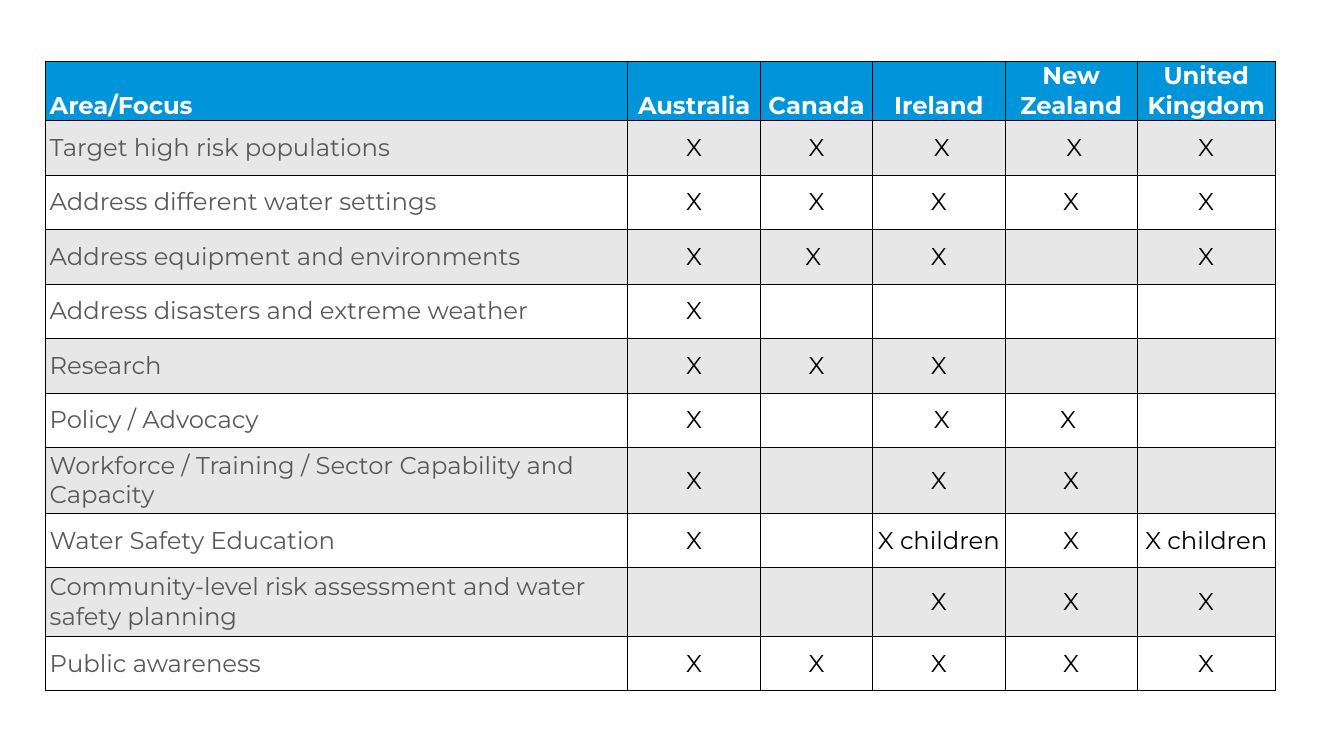
from lxml import etree
from pptx import Presentation, util as u
from pptx.dml.color import RGBColor
from pptx.enum import text
from pptx.oxml import ns

SLIDE_WIDTH = u.Inches(10)
SLIDE_HEIGHT = SLIDE_WIDTH * 9 // 16
COLORS = {
    "header": "0095DA",
    "band": "E7E7E7",
    "header_text": "FFFFFF",
    "area_text": "595959",
    "mark": "000000",
    "border": "000000",
}
FONT, FONT_SIZE = "Montserrat", u.Pt(13)
LEFT_SHARE, TOP_SHARE = 0.034, 0.081
COLUMN_WIDTHS = [4.33, 0.99, 0.83, 0.99, 0.98, 1.03]
TABLE_HEIGHT = 4.65
TALL_ROWS = {7: 0.49, 9: 0.51}

HEADER = ["Area/Focus", "Australia", "Canada", "Ireland", "New Zealand", "United Kingdom"]
FOCUS_AREAS = [
    ["Target high risk populations", "X", "X", " X", " X", "X"],
    ["Address different water settings", "X", "X", "X", "X", "X"],
    ["Address equipment and environments", "X", "X ", "X", "", "X"],
    ["Address disasters and extreme weather", "X", "", "", "", ""],
    ["Research", "X", "X", "X", "", ""],
    ["Policy / Advocacy", "X", "", " X", "X ", ""],
    ["Workforce / Training / Sector Capability and Capacity", "X", "", "X", "X", ""],
    ["Water Safety Education", "X", "", "X children", "X", "X children"],
    ["Community-level risk assessment and water safety planning", "", "", "X", "X", "X"],
    ["Public awareness", "X", "X", "X", "X", "X"],
]


def set_borders(cell):
    """Outline all four sides; border elements must precede the cell's fill."""
    properties = cell._tc.get_or_add_tcPr()
    for position, side in enumerate(("a:lnL", "a:lnR", "a:lnT", "a:lnB")):
        line = etree.Element(ns.qn(side), w=str(u.Pt(0.5)))
        fill = etree.SubElement(line, ns.qn("a:solidFill"))
        etree.SubElement(fill, ns.qn("a:srgbClr"), val=COLORS["border"])
        properties.insert(position, line)


def set_fill(cell, row):
    """Colour the header and every odd row; leave the others clear."""
    if row and row % 2 == 0:
        cell.fill.background()
        return
    cell.fill.solid()
    cell.fill.fore_color.rgb = RGBColor.from_string(COLORS["band" if row else "header"])


def set_text(cell, content, row, column):
    cell.margin_left = cell.margin_right = u.Inches(0.03)
    cell.margin_top = cell.margin_bottom = 0
    cell.vertical_anchor = text.MSO_ANCHOR.MIDDLE if row else text.MSO_ANCHOR.BOTTOM
    cell.text_frame.text = content
    paragraph = cell.text_frame.paragraphs[0]
    paragraph.alignment = text.PP_ALIGN.CENTER if column else text.PP_ALIGN.LEFT
    color = "header_text" if row == 0 else "mark" if column else "area_text"
    for run in paragraph.runs:
        run.font.name, run.font.size, run.font.bold = FONT, FONT_SIZE, row == 0
        run.font.color.rgb = RGBColor.from_string(COLORS[color])


def row_heights(row_count):
    """Share what the tall rows leave equally among the other rows."""
    regular = (TABLE_HEIGHT - sum(TALL_ROWS.values())) / (row_count - len(TALL_ROWS))
    return [TALL_ROWS.get(row, regular) for row in range(row_count)]


def add_focus_table(slide, rows):
    table = slide.shapes.add_table(
        len(rows), len(COLUMN_WIDTHS),
        int(SLIDE_WIDTH * LEFT_SHARE), int(SLIDE_HEIGHT * TOP_SHARE),
        u.Inches(sum(COLUMN_WIDTHS)), u.Inches(TABLE_HEIGHT),
    ).table
    table.horz_banding = False
    for column, width in zip(table.columns, COLUMN_WIDTHS):
        column.width = u.Inches(width)
    for row, (contents, height) in enumerate(zip(rows, row_heights(len(rows)))):
        table.rows[row].height = u.Inches(height)
        for column, content in enumerate(contents):
            cell = table.cell(row, column)
            set_text(cell, content, row, column)
            set_fill(cell, row)
            set_borders(cell)


def main():
    presentation = Presentation()
    presentation.slide_width, presentation.slide_height = SLIDE_WIDTH, SLIDE_HEIGHT
    slide = presentation.slides.add_slide(presentation.slide_layouts[6])
    add_focus_table(slide, [HEADER] + FOCUS_AREAS)
    presentation.save("out.pptx")


if __name__ == "__main__":
    main()
